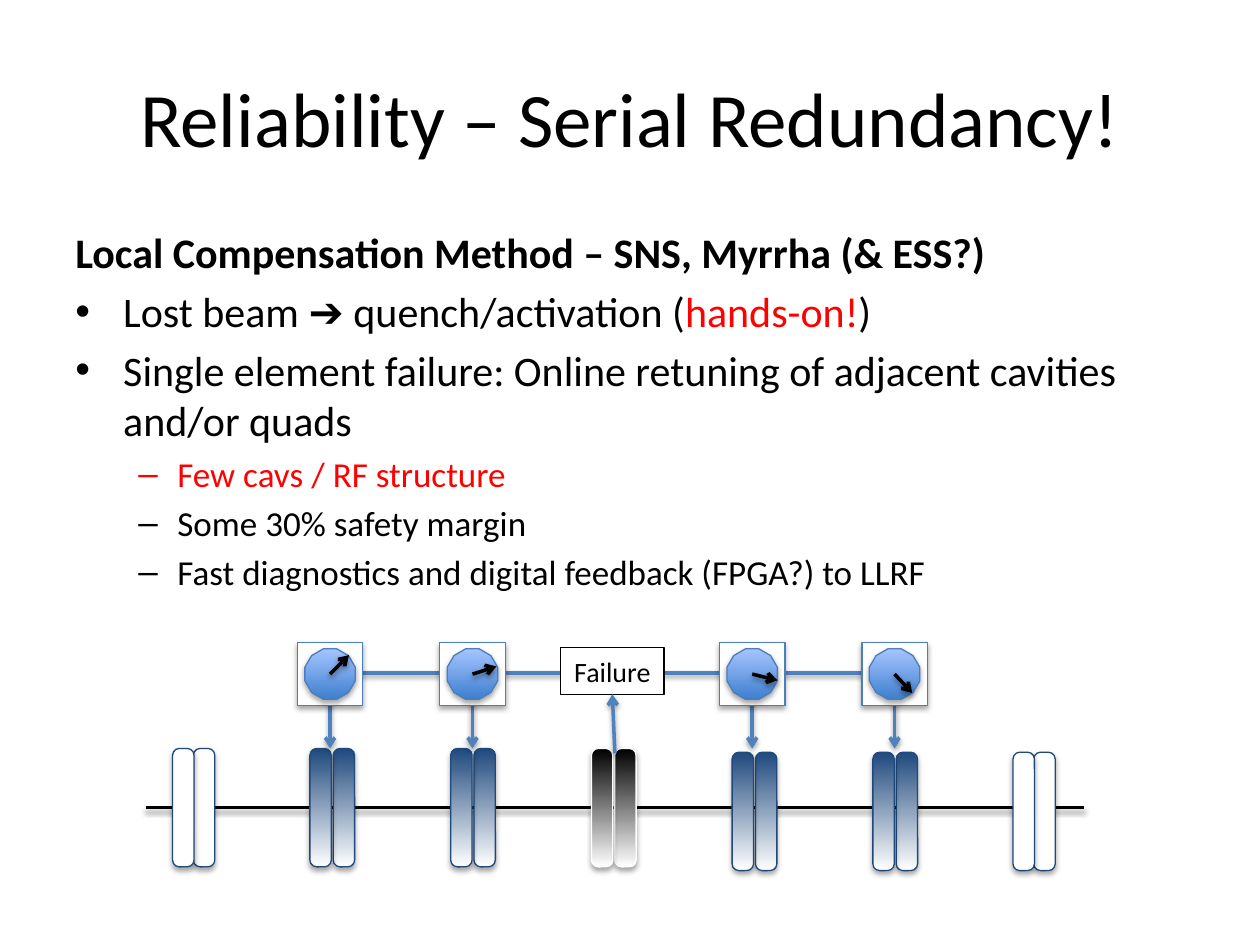
from dataclasses import dataclass

from lxml import etree
from pptx import Presentation
from pptx.dml.color import RGBColor
from pptx.enum.shapes import MSO_CONNECTOR, MSO_SHAPE
from pptx.enum.text import MSO_ANCHOR, MSO_AUTO_SIZE, PP_ALIGN
from pptx.oxml.ns import qn
from pptx.util import Inches, Pt

RECT = MSO_SHAPE.RECTANGLE
ROUND = MSO_SHAPE.ROUNDED_RECTANGLE
DIAL = MSO_SHAPE.DODECAGON
LINE = MSO_CONNECTOR.STRAIGHT
MIDDLE = MSO_ANCHOR.MIDDLE
TOP = MSO_ANCHOR.TOP
FIXED = MSO_AUTO_SIZE.NONE
CENTER = PP_ALIGN.CENTER
LEFT = PP_ALIGN.LEFT


@dataclass(frozen=True)
class Theme:
    font: str = "Calibri"
    symbol: str = "Arial"
    black: str = "000000"
    white: str = "FFFFFF"
    red: str = "FF0000"
    navy: str = "1F497D"
    blue: str = "4F81BD"
    edge: str = "4B7EBC"
    pale: str = "A4C4FF"
    deep: str = "3F80CE"
    title: int = 44
    body: int = 24
    sub: int = 20
    label: int = 16
    thin: float = 0.75
    thick: float = 2


THEME = Theme()


@dataclass(frozen=True)
class Span:
    text: str
    color: str = THEME.black
    font: str = THEME.font
    bold: bool = False


@dataclass(frozen=True)
class Item:
    spans: tuple[Span, ...]
    size: int = THEME.body
    mark: str = ""
    margin: float = 0
    hang: float = 0


@dataclass(frozen=True)
class Pair:
    left: float
    top: float
    pitch: float
    fill: tuple[str, ...]
    line: str = THEME.navy


@dataclass(frozen=True)
class Gauge:
    left: float
    dx: float
    dy: float


def bullet(*spans: Span) -> Item:
    return Item(spans, mark="•", margin=0.38, hang=-0.38)


def dash(text: str, color: str = THEME.black) -> Item:
    return Item((Span(text, color),), THEME.sub, "–", 0.81, -0.31)


ITEMS = (
    Item((Span("Local Compensation Method – SNS, Myrrha (& ESS?)", bold=True),)),
    bullet(
        Span("Lost beam "),
        Span("➔", font=THEME.symbol),
        Span(" quench/activation ("),
        Span("hands-on!", THEME.red),
        Span(")"),
    ),
    bullet(Span("Single element failure: Online retuning of adjacent cavities and/or quads")),
    dash("Few cavs / RF structure", THEME.red),
    dash("Some 30% safety margin"),
    dash("Fast diagnostics and digital feedback (FPGA?) to LLRF"),
)

HIGH, LOW = 5.94, 5.97
START, STEP = 2.46, 1.117
PLAIN = (THEME.white,)
TUNED = (THEME.navy, THEME.white)
PAIRS = (
    Pair(1.37, HIGH, 0.165, PLAIN),
    Pair(START, HIGH, 0.185, TUNED),
    Pair(START + STEP, HIGH, 0.185, TUNED),
    Pair(START + 2 * STEP, HIGH, 0.185, (THEME.black, THEME.white), THEME.white),
    Pair(START + 3 * STEP, LOW, 0.185, TUNED),
    Pair(START + 4 * STEP, LOW, 0.185, TUNED),
    Pair(8.04, LOW, 0.165, PLAIN),
)

GAUGES = (
    Gauge(2.36, 0.15, -0.15),
    Gauge(3.49, 0.19, -0.06),
    Gauge(5.71, 0.20, 0.05),
    Gauge(6.84, 0.14, 0.15),
)


def write(para, text: str, *, size: float, color: str = THEME.black,
          font: str = THEME.font, bold: bool = False, align=LEFT) -> None:
    para.alignment = align
    run = para.add_run()
    run.text = text
    run.font.size = Pt(size)
    run.font.name = font
    run.font.bold = bold
    run.font.color.rgb = RGBColor.from_string(color)


def add_shade(item, alpha: int, blur: float, dist: float) -> None:
    effect = etree.SubElement(item.element.spPr, qn("a:effectLst"))
    shade = etree.SubElement(
        effect, qn("a:outerShdw"), blurRad=str(Pt(blur)), dist=str(Pt(dist)),
        dir="5400000", rotWithShape="0")
    color = etree.SubElement(shade, qn("a:srgbClr"), val=THEME.black)
    etree.SubElement(color, qn("a:alpha"), val=str(alpha * 1000))


def add_box(slide, kind, left: float, top: float, width: float, height: float,
            fill: tuple[str, ...], line: str, shade: bool = True):
    box = slide.shapes.add_shape(
        kind, Inches(left), Inches(top), Inches(width), Inches(height))
    if len(fill) == 1:
        box.fill.solid()
        box.fill.fore_color.rgb = RGBColor.from_string(fill[0])
    else:
        box.fill.gradient()
        box.fill.gradient_angle = 270
        for stop, color in zip(box.fill.gradient_stops, fill):
            stop.color.rgb = RGBColor.from_string(color)
    box.line.color.rgb = RGBColor.from_string(line)
    box.line.width = Pt(THEME.thin)
    if shade:
        add_shade(box, 35, 3.1, 1.8)
    else:
        box.shadow.inherit = False
    return box


def add_line(slide, x1: float, y1: float, x2: float, y2: float,
             color: str = THEME.blue, arrow: bool = False):
    line = slide.shapes.add_connector(
        LINE, Inches(x1), Inches(y1), Inches(x2), Inches(y2))
    line.line.color.rgb = RGBColor.from_string(color)
    line.line.width = Pt(THEME.thick)
    if arrow:
        etree.SubElement(line.element.spPr.find(qn("a:ln")), qn("a:tailEnd"), type="arrow")
    add_shade(line, 38, 3.1, 1.6)
    return line


def add_title(slide, text: str) -> None:
    title = slide.shapes.title
    title.left, title.top = Inches(0.5), Inches(0.3)
    title.width, title.height = Inches(9), Inches(1.25)
    frame = title.text_frame
    frame.vertical_anchor = MIDDLE
    frame.auto_size = FIXED
    write(frame.paragraphs[0], text, size=THEME.title, align=CENTER)


def add_body(slide, items: tuple[Item, ...]) -> None:
    box = slide.shapes.add_textbox(Inches(0.5), Inches(1.75), Inches(9), Inches(4.95))
    frame = box.text_frame
    frame.word_wrap = True
    frame.vertical_anchor = TOP
    for index, item in enumerate(items):
        para = frame.add_paragraph() if index else frame.paragraphs[0]
        para.space_before = Pt(item.size * 0.2)
        for span in item.spans:
            write(para, span.text, size=item.size, color=span.color,
                  font=span.font, bold=span.bold)
        if item.mark:
            props = para._p.get_or_add_pPr()
            props.set("marL", str(Inches(item.margin)))
            props.set("indent", str(Inches(item.hang)))
            etree.SubElement(props, qn("a:buFont"), typeface=THEME.symbol)
            etree.SubElement(props, qn("a:buChar"), char=item.mark)


def add_pair(slide, pair: Pair) -> None:
    for side in (1, 0):
        bar = add_box(slide, ROUND, pair.left + side * pair.pitch, pair.top,
                      0.17, 0.94, pair.fill, pair.line)
        bar.adjustments[0] = 0.32


def add_gauge(slide, gauge: Gauge) -> None:
    add_box(slide, RECT, gauge.left, 5.1, 0.52, 0.5, PLAIN, THEME.edge)
    add_box(slide, DIAL, gauge.left + 0.06, 5.15, 0.4, 0.4,
            (THEME.pale, THEME.deep), THEME.edge)
    x, y = gauge.left + 0.26, 5.35
    add_line(slide, x, y, x + gauge.dx, y + gauge.dy, THEME.black, arrow=True)


def main() -> None:
    deck = Presentation()
    deck.slide_width, deck.slide_height = Inches(10), Inches(7.5)
    slide = deck.slides.add_slide(deck.slide_layouts[5])
    add_title(slide, "Reliability – Serial Redundancy!")
    add_body(slide, ITEMS)
    add_line(slide, 1.16, 6.41, 8.6, 6.41, THEME.black)
    for pair in PAIRS:
        add_pair(slide, pair)
    for gauge in GAUGES:
        x = gauge.left + 0.26
        add_line(slide, x, 5.52, x, 5.94, arrow=True)
    add_line(slide, 2.63, 5.34, 7.11, 5.34)
    label = add_box(slide, RECT, 4.45, 5.14, 0.82, 0.37, PLAIN, THEME.black, shade=False)
    label.text_frame.word_wrap = False
    write(label.text_frame.paragraphs[0], "Failure", size=THEME.label, align=CENTER)
    alarm = add_line(slide, 4.88, 5.98, 4.86, 5.51, arrow=True)
    alarm.end_connect(label, 2)
    for gauge in GAUGES:
        add_gauge(slide, gauge)
    deck.save("out.pptx")


if __name__ == "__main__":
    main()
